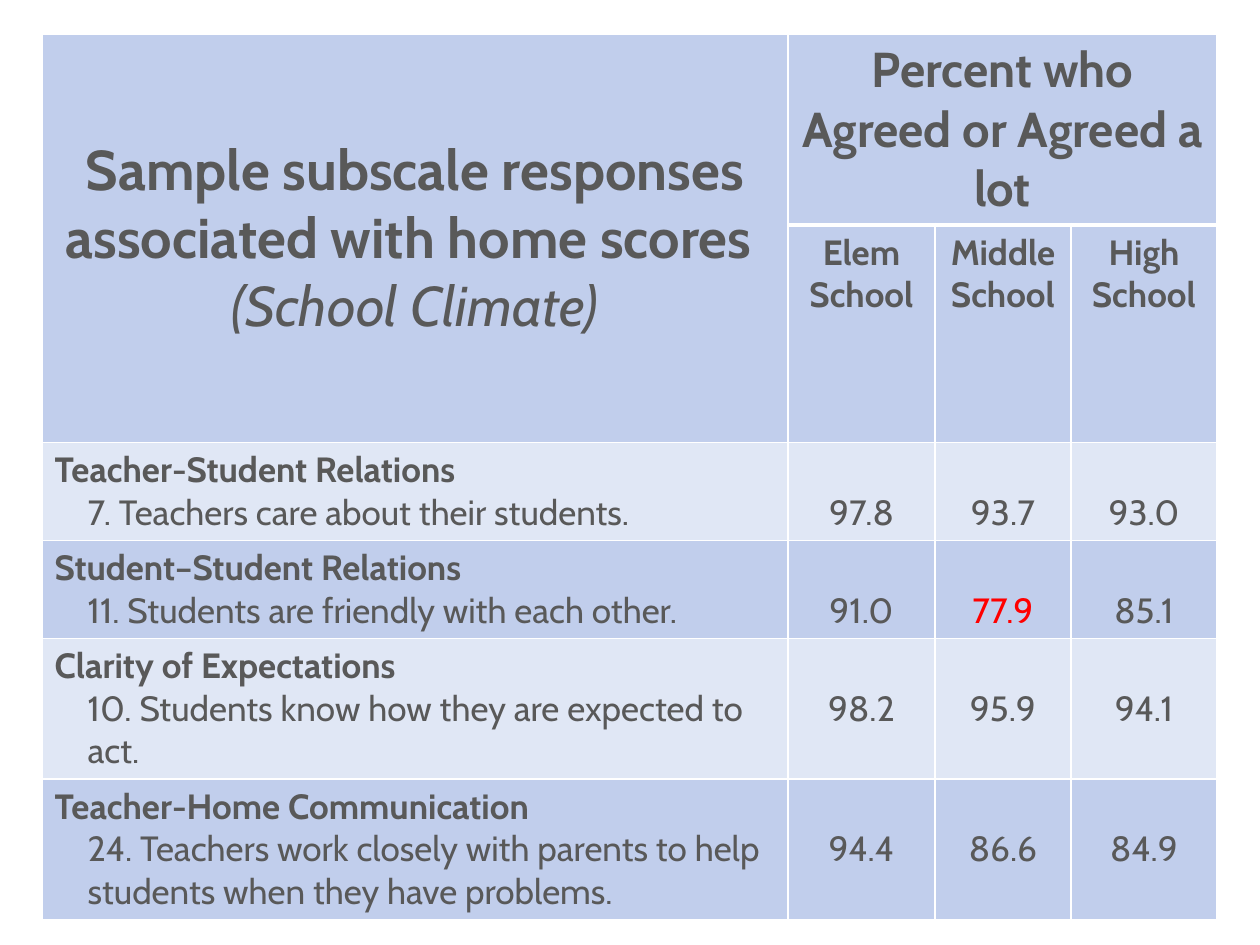
from lxml import etree
from pptx import Presentation
from pptx.dml.color import RGBColor
from pptx.enum.text import MSO_ANCHOR, PP_ALIGN
from pptx.oxml.ns import qn
from pptx.util import Emu, Pt

CENTER, LEFT = PP_ALIGN.CENTER, PP_ALIGN.LEFT
MIDDLE = MSO_ANCHOR.MIDDLE
THEME = {
    "font": "Cabin", "text": "595959", "alert": "FF0000", "line": "FFFFFF",
    "dark": "C1CEEC", "light": "E0E7F5",
    "title": 32, "heading": 28, "body": 20,
}
COLS = [746, 147, 136, 146]
ROWS = [190, 217, 98, 98, 140, 141]
SCHOOLS = [["Elem", "School"], ["Middle School"], ["High School"]]
RESPONSES = [
    ("Teacher-Student Relations", "7. Teachers care about their students.",
     ["97.8", "93.7", "93.0"]),
    ("Student–Student Relations", "11. Students are friendly with each other.",
     ["91.0", "77.9", "85.1"]),
    ("Clarity of Expectations", "10. Students know how they are expected to act.",
     ["98.2", "95.9", "94.1"]),
    ("Teacher-Home Communication",
     "24. Teachers work closely with parents to help students when they have problems.",
     ["94.4", "86.6", "84.9"]),
]
LOW_SCORE = "77.9"


def px(n):
    return Emu(round(n * 914400 / 126))


def add_run(p, text, size="body", bold=False, italic=False, color="text", align=LEFT):
    p.alignment = align
    r = p.add_run()
    r.text = text
    r.font.name = THEME["font"]
    r.font.size = Pt(THEME[size])
    r.font.bold = bold
    r.font.italic = italic
    r.font.color.rgb = RGBColor.from_string(THEME[color])


prs = Presentation()
prs.slide_width, prs.slide_height = px(1260), px(945)
s = prs.slides.add_slide(prs.slide_layouts[6])

frame = s.shapes.add_table(len(ROWS), len(COLS), px(42), px(34), px(sum(COLS)), px(sum(ROWS)))
table = frame.table
table.first_row = False
table.horz_banding = False
for col, width in zip(table.columns, COLS):
    col.width = px(width)
for row, height in zip(table.rows, ROWS):
    row.height = px(height)

for i in range(len(ROWS)):
    for j in range(len(COLS)):
        cell = table.cell(i, j)
        tcPr = cell._tc.get_or_add_tcPr()
        for side in ("lnL", "lnR", "lnT", "lnB"):
            thick = j > 0 and (i, side) in ((0, "lnB"), (1, "lnT"))
            ln = etree.SubElement(tcPr, qn(f"a:{side}"), w=str(Pt(3 if thick else 1)))
            fill = etree.SubElement(ln, qn("a:solidFill"))
            etree.SubElement(fill, qn("a:srgbClr"), val=THEME["line"])
        cell.fill.solid()
        shade = "light" if i in (2, 4) else "dark"
        cell.fill.fore_color.rgb = RGBColor.from_string(THEME[shade])

title = table.cell(0, 0)
title.merge(table.cell(1, 0))
title.vertical_anchor = MIDDLE
p = title.text_frame.paragraphs[0]
add_run(p, "Sample subscale responses associated with home scores ", "title", bold=True, align=CENTER)
p.add_line_break()
add_run(p, "(School Climate)", "title", italic=True, align=CENTER)

heading = table.cell(0, 1)
heading.merge(table.cell(0, 3))
add_run(heading.text_frame.paragraphs[0], "Percent who Agreed or Agreed a lot",
        "heading", bold=True, align=CENTER)

for j, lines in enumerate(SCHOOLS, 1):
    tf = table.cell(1, j).text_frame
    for k, line in enumerate(lines):
        p = tf.add_paragraph() if k else tf.paragraphs[0]
        add_run(p, line, bold=True, align=CENTER)

for i, (subscale, item, scores) in enumerate(RESPONSES, 2):
    tf = table.cell(i, 0).text_frame
    add_run(tf.paragraphs[0], subscale, bold=True)
    p = tf.add_paragraph()
    pPr = p._p.get_or_add_pPr()
    pPr.set("marL", str(px(33)))
    pPr.set("indent", "0")
    add_run(p, item)
    for j, score in enumerate(scores, 1):
        cell = table.cell(i, j)
        cell.margin_top = px(49)
        color = "alert" if score == LOW_SCORE else "text"
        add_run(cell.text_frame.paragraphs[0], score, color=color, align=CENTER)

prs.save("out.pptx")
